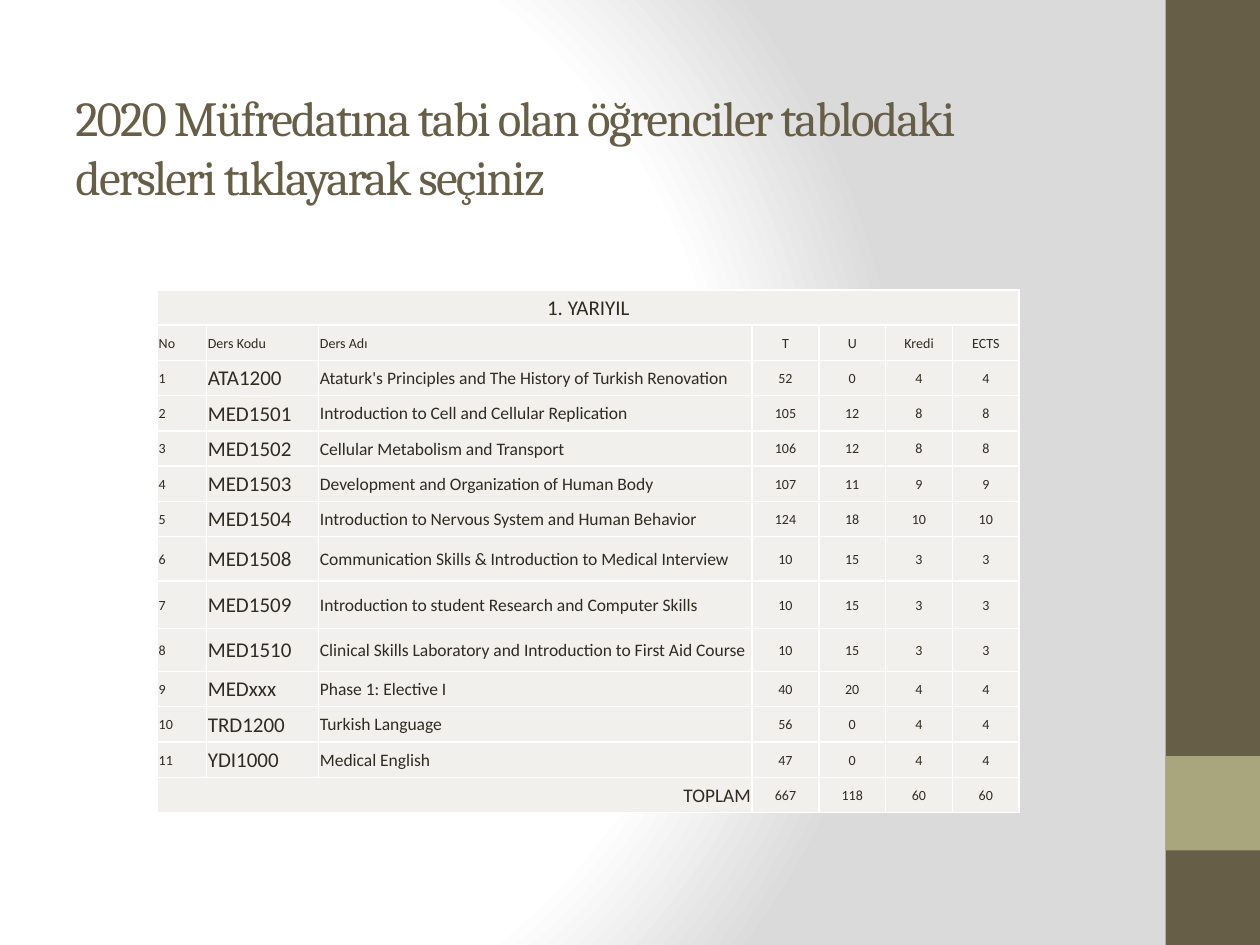
import pptx
import pptx.dml.color
import pptx.enum.shapes
import pptx.enum.text
import pptx.oxml
import pptx.oxml.ns
import pptx.util
from pptx.util import Inches

RGBColor = pptx.dml.color.RGBColor
Align = pptx.enum.text.PP_ALIGN
Anchor = pptx.enum.text.MSO_ANCHOR

BROWN = RGBColor(0x67, 0x5E, 0x47)
OLIVE = RGBColor(0xA9, 0xA5, 0x7C)
INK = RGBColor(0x2F, 0x2B, 0x20)
CELL_FILL = RGBColor(0xF1, 0xF0, 0xEC)
WHITE = RGBColor(0xFF, 0xFF, 0xFF)
GREY = RGBColor(0xDA, 0xDA, 0xDA)

TITLE = "2020 Müfredatına tabi olan öğrenciler tablodaki dersleri tıklayarak seçiniz"
HEADINGS = ("No", "Ders Kodu", "Ders Adı", "T", "U", "Kredi", "ECTS")
# Code, name, theory hours, practice hours, credits (the ECTS value is the same)
COURSES = [
    ("ATA1200", "Ataturk's Principles and The History of Turkish Renovation", 52, 0, 4),
    ("MED1501", "Introduction to Cell and Cellular Replication", 105, 12, 8),
    ("MED1502", "Cellular Metabolism and Transport", 106, 12, 8),
    ("MED1503", "Development and Organization of Human Body", 107, 11, 9),
    ("MED1504", "Introduction to Nervous System and Human Behavior", 124, 18, 10),
    ("MED1508", "Communication Skills & Introduction to Medical Interview", 10, 15, 3),
    ("MED1509", "Introduction to student Research and Computer Skills", 10, 15, 3),
    ("MED1510", "Clinical Skills Laboratory and Introduction to First Aid Course", 10, 15, 3),
    ("MEDxxx", "Phase 1: Elective I", 40, 20, 4),
    ("TRD1200", "Turkish Language", 56, 0, 4),
    ("YDI1000", "Medical English", 47, 0, 4),
]
TOTALS = (667, 118, 60, 60)
COLUMN_WIDTHS = [0.39, 0.89, 3.44] + [0.53] * 4
ROW_HEIGHT = 0.28
TALL_ROWS = {7: 0.35, 8: 0.38, 9: 0.34}
COURSE_SIZES = (8, 12, 10, 8, 8, 8, 8)


def add_background(slide):
    """Circular gradient from white to grey."""
    slide.background.fill.solid()
    solid = slide.element.find(".//" + pptx.oxml.ns.qn("a:solidFill"))
    stops = "".join(
        f'<a:gs pos="{percent * 1000}"><a:srgbClr val="{color}"/></a:gs>'
        for percent, color in ((0, WHITE), (75, WHITE), (100, GREY)))
    gradient = pptx.oxml.parse_xml(
        f'<a:gradFill {pptx.oxml.ns.nsdecls("a")} rotWithShape="1">'
        f'<a:gsLst>{stops}</a:gsLst><a:path path="circle">'
        '<a:fillToRect l="20000" t="50000" r="100000" b="50000"/>'
        '</a:path></a:gradFill>')
    solid.getparent().replace(solid, gradient)


def add_sidebar(slide, left, top, width, height):
    """Brown band with an olive square of the band's width."""
    for y, part_height, color in ((top, height, BROWN), (Inches(6), width, OLIVE)):
        band = slide.shapes.add_shape(
            pptx.enum.shapes.MSO_SHAPE.RECTANGLE, left, y, width, part_height)
        band.shadow.inherit = False
        band.fill.solid()
        band.fill.fore_color.rgb = color
        band.line.fill.background()


def add_run(paragraph, text, font_name, size, color):
    run = paragraph.add_run()
    run.text = text
    run.font.name = font_name
    run.font.size = pptx.util.Pt(size)
    run.font.color.rgb = color
    return run


def add_title(slide, left, top, width, height):
    frame = slide.shapes.add_textbox(left, top, width, height).text_frame
    frame.word_wrap = True
    frame.vertical_anchor = Anchor.MIDDLE
    run = add_run(frame.paragraphs[0], TITLE, "Cambria", 28, BROWN)
    run.font._element.set("spc", "-100")


def style_cell(cell):
    """White borders, pale fill and tight margins."""
    properties = cell._tc.get_or_add_tcPr()
    for side in ("lnL", "lnR", "lnT", "lnB"):
        properties.append(pptx.oxml.parse_xml(
            f'<a:{side} {pptx.oxml.ns.nsdecls("a")} w="12700"><a:solidFill>'
            f'<a:srgbClr val="{WHITE}"/></a:solidFill></a:{side}>'))
    cell.fill.solid()
    cell.fill.fore_color.rgb = CELL_FILL
    cell.vertical_anchor = Anchor.MIDDLE
    cell.margin_left = cell.margin_right = cell.margin_top = Inches(0.01)
    cell.margin_bottom = 0


def write_cell(cell, value, size, alignment):
    paragraph = cell.text_frame.paragraphs[0]
    paragraph.alignment = alignment
    add_run(paragraph, str(value), "Calibri", size, INK)


def add_course_table(slide, left, top, width, height):
    row_count = len(COURSES) + 3
    last = row_count - 1
    table = slide.shapes.add_table(
        row_count, len(HEADINGS), left, top, width, height).table
    table.first_row = table.horz_banding = False
    for column, column_width in zip(table.columns, COLUMN_WIDTHS):
        column.width = Inches(column_width)
    for index, row in enumerate(table.rows):
        row.height = Inches(TALL_ROWS.get(index, ROW_HEIGHT))
    for cell in table.iter_cells():
        style_cell(cell)

    # Semester heading
    table.cell(0, 0).merge(table.cell(0, 6))
    write_cell(table.cell(0, 0), "1. YARIYIL", 12, Align.CENTER)

    # Column headings and courses
    body = [(HEADINGS, [8] * len(HEADINGS))]
    for number, course in enumerate(COURSES, 1):
        body.append(((number, *course, course[-1]), COURSE_SIZES))
    for row, (values, sizes) in enumerate(body, 1):
        for column, (value, size) in enumerate(zip(values, sizes)):
            alignment = Align.LEFT if column < 3 else Align.CENTER
            write_cell(table.cell(row, column), value, size, alignment)

    # Totals
    table.cell(last, 0).merge(table.cell(last, 2))
    write_cell(table.cell(last, 0), "TOPLAM", 11, Align.RIGHT)
    for column, total in enumerate(TOTALS, 3):
        write_cell(table.cell(last, column), total, 8, Align.CENTER)


def main():
    presentation = pptx.Presentation()
    presentation.slide_width = Inches(10)
    presentation.slide_height = Inches(7.5)
    slide = presentation.slides.add_slide(presentation.slide_layouts[6])
    add_background(slide)
    add_sidebar(slide, Inches(9.25), 0, Inches(0.75), Inches(7.5))
    add_title(slide, Inches(0.5), Inches(0.3), Inches(8.33), Inches(1.72))
    add_course_table(slide, Inches(1.25), Inches(2.3), Inches(6.83), Inches(4.14))
    presentation.save("out.pptx")


if __name__ == "__main__":
    main()
